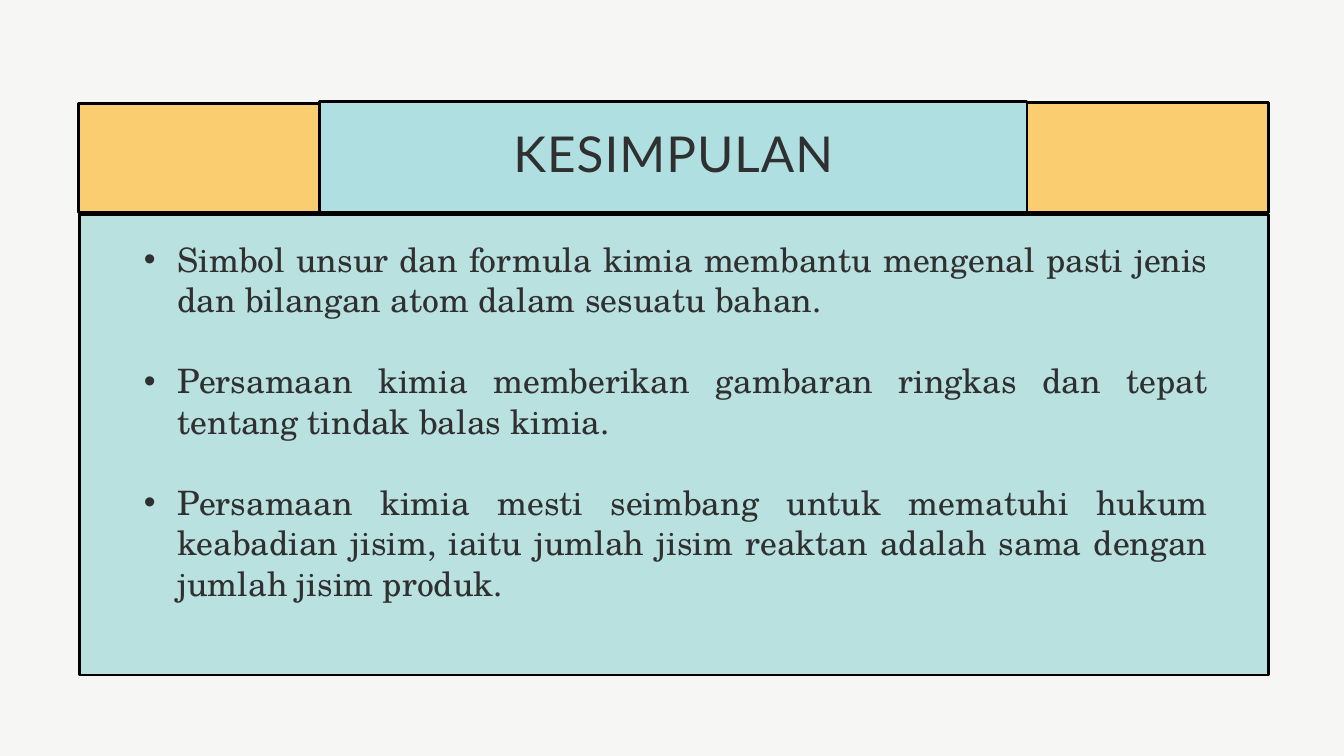
from lxml.etree import SubElement
from pptx import Presentation
from pptx.dml.color import RGBColor
from pptx.enum.shapes import MSO_SHAPE
from pptx.enum.text import MSO_ANCHOR, MSO_AUTO_SIZE, PP_ALIGN
from pptx.oxml.ns import qn
from pptx.util import Cm, Pt

COLORS = {
    "background": "F6F6F5",
    "body": "B8E1E0",
    "heading": "AFDFE0",
    "side": "FACD71",
    "outline": "000000",
    "text": "303030",
}
FRAME_FORMAT = {
    "margin_left": 0, "margin_right": 0, "margin_top": 0, "margin_bottom": 0,
    "word_wrap": True,
    "auto_size": MSO_AUTO_SIZE.NONE,
    "vertical_anchor": MSO_ANCHOR.TOP,
}
TITLE_FORMAT = {"alignment": PP_ALIGN.CENTER, "line_spacing": Pt(53)}
BULLET_FORMAT = {"alignment": PP_ALIGN.JUSTIFY, "line_spacing": Pt(43.4)}
TITLE_FONT = {"name": "Lato", "size": Pt(53), "bold": False}
BODY_FONT = {"name": "TeX Gyre Schola", "size": Pt(36), "bold": False}


def color(name):
    return RGBColor.from_string(COLORS[name])


def apply_format(target, values):
    for attribute, value in values.items():
        setattr(target, attribute, value)


presentation = Presentation()
presentation.slide_width = Cm(50.8)
presentation.slide_height = Cm(28.58)
slide = presentation.slides.add_slide(presentation.slide_layouts[5])
slide.background.fill.solid()
slide.background.fill.fore_color.rgb = color("background")

# Outlined panels: body, right side, heading, left side
panels = [
    ("body", 3.02, 8.1, 44.93, 17.42),
    ("side", 38.82, 3.89, 9.12, 4.14),
    ("heading", 12.09, 3.84, 26.73, 4.19),
    ("side", 2.97, 3.91, 9.12, 4.14),
]
for fill_name, *box in panels:
    panel = slide.shapes.add_shape(MSO_SHAPE.RECTANGLE, *map(Cm, box))
    panel.shadow.inherit = False
    panel.fill.solid()
    panel.fill.fore_color.rgb = color(fill_name)
    panel.line.color.rgb = color("outline")
    panel.line.width = Pt(3)

# Title, brought in front of the heading panel
title = slide.shapes.title
apply_format(title, {"left": Cm(12.09), "top": Cm(5.03),
                     "width": Cm(26.73), "height": Cm(2.26)})
slide.shapes.element.append(title.element)
apply_format(title.text_frame, FRAME_FORMAT)
paragraph = title.text_frame.paragraphs[0]
apply_format(paragraph, TITLE_FORMAT)
run = paragraph.add_run()
run.text = "KESIMPULAN"
apply_format(run.font, TITLE_FONT)
run.font.color.rgb = color("text")
run.font.element.set("spc", "110") if hasattr(run.font, "element") else run._r.get_or_add_rPr().set("spc", "110")

# Bulleted conclusions
conclusions = [
    "Simbol unsur dan formula kimia membantu mengenal pasti jenis dan bilangan atom dalam sesuatu bahan.",
    "Persamaan kimia memberikan gambaran ringkas dan tepat tentang tindak balas kimia.",
    "Persamaan kimia mesti seimbang untuk mematuhi hukum keabadian jisim, "
    "iaitu jumlah jisim reaktan adalah sama dengan jumlah jisim produk.",
]
text_box = slide.shapes.add_textbox(Cm(5.44), Cm(9.02), Cm(40.21), Cm(13.79))
text_frame = text_box.text_frame
apply_format(text_frame, FRAME_FORMAT)
for index, conclusion in enumerate(conclusions):
    paragraph = text_frame.add_paragraph() if index else text_frame.paragraphs[0]
    apply_format(paragraph, BULLET_FORMAT)
    if index:
        paragraph.space_before = Pt(43.4)
    properties = paragraph._p.get_or_add_pPr()
    properties.set("marL", str(Cm(1.27)))
    properties.set("indent", str(-Cm(1.27)))
    SubElement(properties, qn("a:buFont"), typeface="Arial")
    SubElement(properties, qn("a:buChar"), char="•")
    run = paragraph.add_run()
    run.text = conclusion
    apply_format(run.font, BODY_FONT)
    run.font.color.rgb = color("text")

presentation.save("out.pptx")
